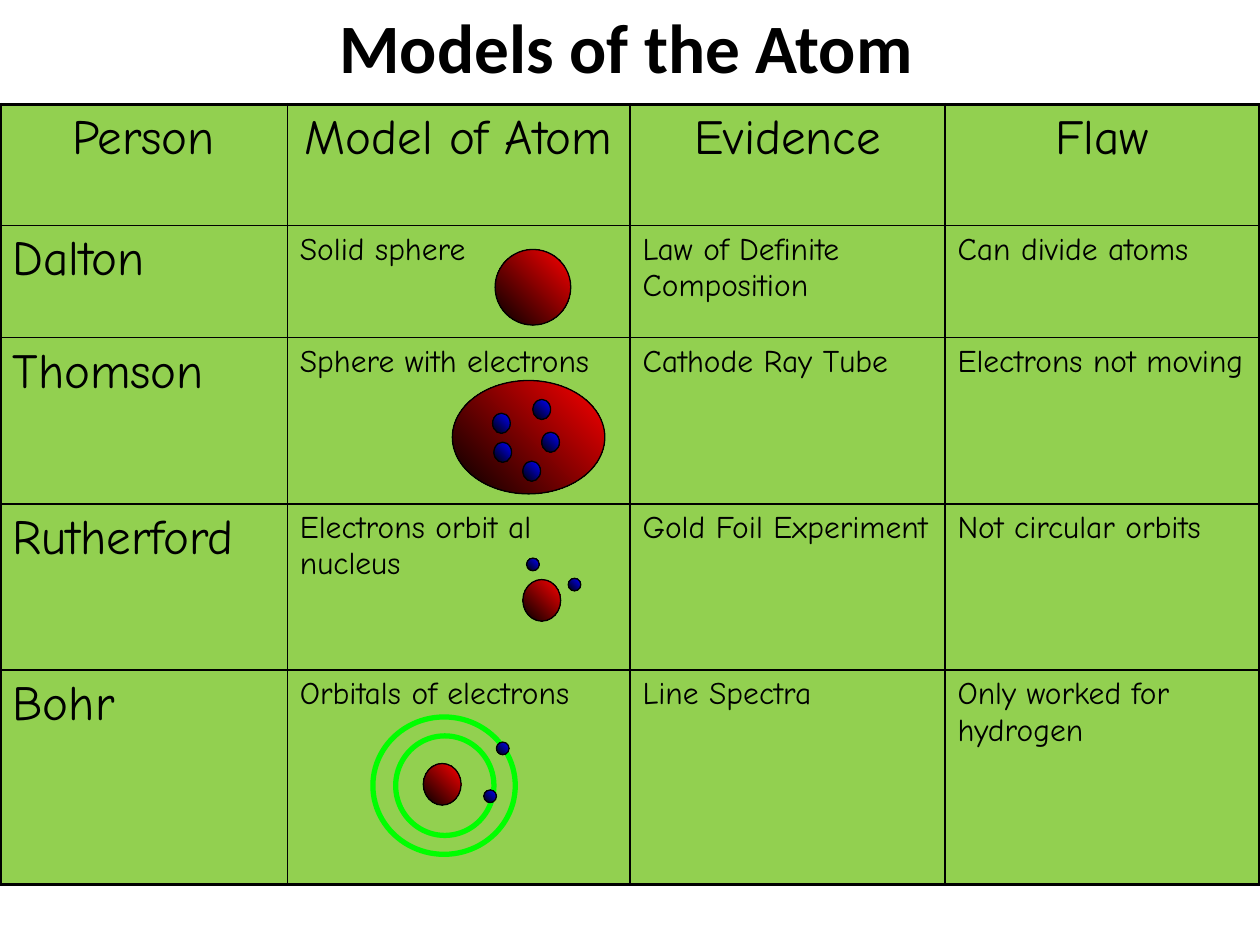
from dataclasses import dataclass

from lxml import etree
from pptx import Presentation
from pptx.dml.color import RGBColor
from pptx.enum.shapes import MSO_SHAPE
from pptx.enum.text import MSO_ANCHOR, PP_ALIGN
from pptx.oxml.ns import qn
from pptx.util import Inches, Pt

OVAL = MSO_SHAPE.OVAL
MIDDLE = MSO_ANCHOR.MIDDLE
LEFT, CENTER = PP_ALIGN.LEFT, PP_ALIGN.CENTER


@dataclass(frozen=True)
class Theme:
    ink: str = "000000"
    cell: str = "92D050"
    nucleus: str = "FF0000"
    electron: str = "0000FF"
    ring: str = "00FF00"
    title_font: str = "Calibri"
    body_font: str = "Comic Neue"
    title_size: float = 39.6
    head_size: float = 28
    body_size: float = 18
    outer_border: float = 2.25
    inner_border: float = 1
    ball_line: float = 0.75
    ring_line: float = 3


THEME = Theme()
WIDTH, HEIGHT = Inches(10), Inches(7.5)
GRID_COLS = 1000
UNIT = WIDTH // GRID_COLS

TITLE_BOX = (47, 0, 900, 73)
TABLE_AT = (0, 83)
COL_WIDTHS = [228, 272, 250, 250]
ROW_HEIGHTS = [96, 89, 132, 132, 170]
ROWS = [
    ["Person", "Model of Atom", "Evidence", "Flaw"],
    ["Dalton", "Solid sphere", "Law of Definite Composition", "Can divide atoms"],
    ["Thomson", "Sphere with electrons", "Cathode Ray Tube", "Electrons not moving"],
    ["Rutherford", "Electrons orbit al nucleus", "Gold Foil Experiment", "Not circular orbits"],
    ["Bohr", "Orbitals of electrons", "Line Spectra", "Only worked for hydrogen"],
]

NUCLEUS = (30, 33)
ORBITING = (10, 10)
EMBEDDED = (14, 16)


def scaled(*lengths):
    return [length * UNIT for length in lengths]


def write(tf, text, align, **font):
    p = tf.paragraphs[0]
    p.alignment = align
    r = p.add_run()
    r.text = text
    r.font.color.rgb = RGBColor.from_string(THEME.ink)
    for name, value in font.items():
        setattr(r.font, name, value)


def add_title(s, box, text):
    tf = s.shapes.add_textbox(*scaled(*box)).text_frame
    tf.word_wrap = True
    tf.vertical_anchor = MIDDLE
    write(tf, text, CENTER, name=THEME.title_font, size=Pt(THEME.title_size), bold=True)


def border_cell(cell, widths):
    tc_pr = cell._tc.get_or_add_tcPr()
    for side, width in widths.items():
        ln = etree.SubElement(tc_pr, qn(f"a:ln{side}"), w=str(Pt(width)))
        fill = etree.SubElement(ln, qn("a:solidFill"))
        etree.SubElement(fill, qn("a:srgbClr"), val=THEME.ink)


def add_models_table(s, at, rows):
    size = sum(COL_WIDTHS), sum(ROW_HEIGHTS)
    table = s.shapes.add_table(len(rows), len(COL_WIDTHS), *scaled(*at, *size)).table
    for lines, attr, lengths in (
        (table.columns, "width", COL_WIDTHS),
        (table.rows, "height", ROW_HEIGHTS),
    ):
        for line, length in zip(lines, lengths):
            setattr(line, attr, length * UNIT)
    last_row, last_col = len(rows) - 1, len(COL_WIDTHS) - 1
    for i, row in enumerate(rows):
        for j, text in enumerate(row):
            cell = table.cell(i, j)
            edges = {"L": j == 0, "R": j == last_col, "T": i == 0, "B": i == last_row}
            border_cell(cell, {
                side: THEME.outer_border if outer else THEME.inner_border
                for side, outer in edges.items()
            })
            cell.fill.solid()
            cell.fill.fore_color.rgb = RGBColor.from_string(THEME.cell)
            heading = i == 0 or j == 0
            size = THEME.head_size if heading else THEME.body_size
            write(cell.text_frame, text, CENTER if i == 0 else LEFT,
                  name=THEME.body_font, size=Pt(size))


def add_oval(s, box, at, size, line_color, line_width):
    x, y = box[0] + at[0], box[1] + at[1]
    sp = s.shapes.add_shape(OVAL, *scaled(x, y, *size))
    sp.shadow.inherit = False
    sp.line.color.rgb = RGBColor.from_string(line_color)
    sp.line.width = Pt(line_width)
    return sp


def add_ring(s, box, at, size):
    add_oval(s, box, at, size, THEME.ring, THEME.ring_line).fill.background()


def add_ball(s, box, at, size, color):
    fill = add_oval(s, box, at, size, THEME.ink, THEME.ball_line).fill
    fill.gradient()
    fill.gradient_angle = 45
    for stop, position, shade in zip(fill.gradient_stops, (0, 1), (THEME.ink, color)):
        stop.position = position
        stop.color.rgb = RGBColor.from_string(shade)


def add_electrons(s, box, spots, size):
    for at in spots:
        add_ball(s, box, at, size, THEME.electron)


def draw_dalton(s, box):
    add_ball(s, box, (165, 19), (60, 60), THEME.nucleus)


def draw_thomson(s, box):
    add_ball(s, box, (131, 34), (121, 90), THEME.nucleus)
    spots = [(163, 60), (164, 83), (195, 49), (187, 98), (202, 75)]
    add_electrons(s, box, spots, EMBEDDED)


def draw_rutherford(s, box):
    add_ball(s, box, (187, 60), NUCLEUS, THEME.nucleus)
    add_electrons(s, box, [(190, 43), (223, 59)], ORBITING)


def draw_bohr(s, box):
    add_ring(s, box, (86, 52), (78, 79))
    add_ring(s, box, (68, 37), (113, 109))
    add_ball(s, box, (108, 74), NUCLEUS, THEME.nucleus)
    add_electrons(s, box, [(156, 95), (166, 57)], ORBITING)


def main():
    prs = Presentation()
    prs.slide_width, prs.slide_height = WIDTH, HEIGHT
    s = prs.slides.add_slide(prs.slide_layouts[6])
    add_title(s, TITLE_BOX, "Models of the Atom")
    add_models_table(s, TABLE_AT, ROWS)
    left = TABLE_AT[0] + COL_WIDTHS[0]
    drawings = [draw_dalton, draw_thomson, draw_rutherford, draw_bohr]
    for i, draw in enumerate(drawings, start=1):
        top = TABLE_AT[1] + sum(ROW_HEIGHTS[:i])
        draw(s, (left, top, COL_WIDTHS[1], ROW_HEIGHTS[i]))
    prs.save("out.pptx")


if __name__ == "__main__":
    main()
